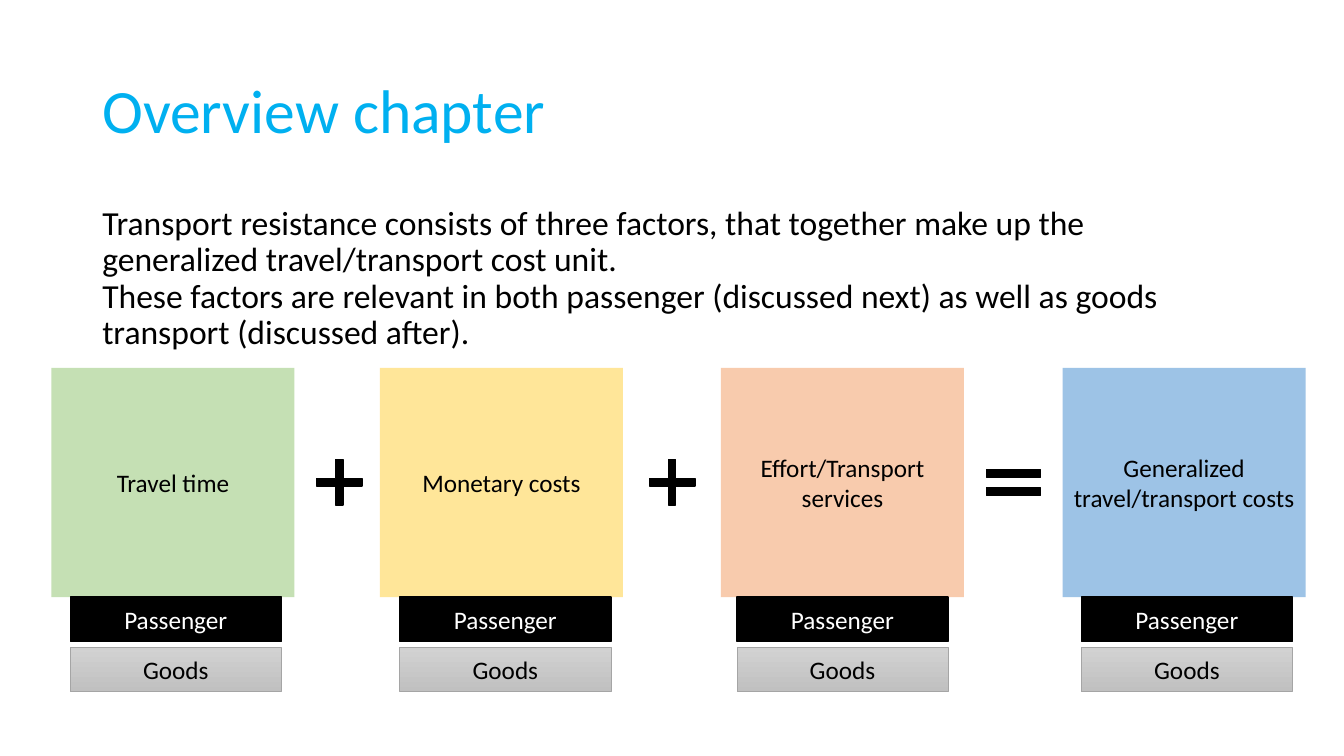
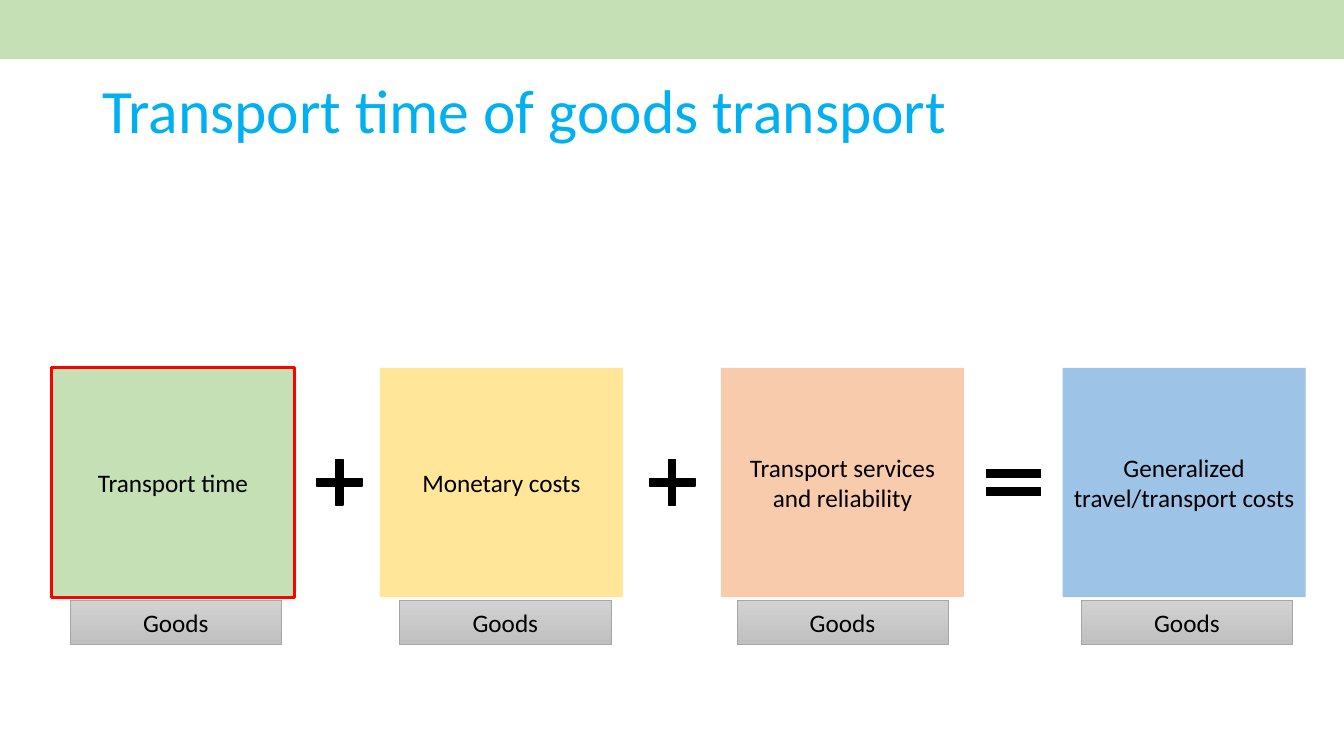
from pptx import Presentation
from pptx.dml.color import RGBColor
from pptx.enum.shapes import MSO_SHAPE as Preset
from pptx.enum.text import MSO_ANCHOR as Anchor, PP_ALIGN as Align
from pptx.util import Pt

# Shared style
FONT = "Calibri"
BLACK = RGBColor(0x00, 0x00, 0x00)
WHITE = RGBColor(0xFF, 0xFF, 0xFF)
TITLE_BLUE = RGBColor(0x00, 0xB0, 0xF0)
GREEN = RGBColor(0xC5, 0xE0, 0xB4)
YELLOW = RGBColor(0xFF, 0xE6, 0x99)
ORANGE = RGBColor(0xF8, 0xCB, 0xAD)
BLUE = RGBColor(0x9D, 0xC3, 0xE6)
RED = RGBColor(0xFF, 0x00, 0x00)
GREY_TOP = RGBColor(0xD2, 0xD2, 0xD2)
GREY_BOTTOM = RGBColor(0xC0, 0xC0, 0xC0)
GREY_LINE = RGBColor(0xA5, 0xA5, 0xA5)

# Shared layout, in points
SLIDE_WIDTH, SLIDE_HEIGHT = 960, 540
MARGIN, TEXT_WIDTH = 66, 828
FACTOR_TOP, FACTOR_WIDTH, FACTOR_HEIGHT = 262.8, 173.6, 163.8
FACTOR_LEFTS = (36.8, 271.4, 515, 759)
FACTOR_COLORS = (GREEN, YELLOW, ORANGE, BLUE)
TAG_LEFTS = (50.2, 285.6, 526.4, 772.4)
TAG_WIDTH, TAG_HEIGHT = 150.8, 31.8
# Preset, left, top, width, height, adjustments
OPERATORS = (
    (Preset.CROSS, 226, 328.2, 32.6, 32.6, (0.42,)),
    (Preset.CROSS, 463.8, 328.2, 32.6, 32.6, (0.42,)),
    (Preset.MATH_EQUAL, 697.6, 325.6, 52.6, 38.2, (0.15, 0.19)),
)


def format_text(paragraph, size, color):
    for run in paragraph.runs:
        run.font.name = FONT
        run.font.size = Pt(size)
        run.font.color.rgb = color


def add_text(slide, text, top, height, size, color, anchor, space_before=0):
    box = slide.shapes.add_textbox(Pt(MARGIN), Pt(top), Pt(TEXT_WIDTH), Pt(height))
    text_frame = box.text_frame
    text_frame.word_wrap = True
    text_frame.vertical_anchor = anchor
    paragraph = text_frame.paragraphs[0]
    paragraph.text = text
    paragraph.line_spacing = 0.9
    paragraph.space_before = Pt(space_before)
    format_text(paragraph, size, color)


def add_title(slide, text):
    add_text(slide, text, 28.8, 104.4, 44, TITLE_BLUE, Anchor.MIDDLE)


def add_preset(slide, preset, left, top, width, height, fill, line=None, line_width=1):
    shape = slide.shapes.add_shape(preset, Pt(left), Pt(top), Pt(width), Pt(height))
    shape.shadow.inherit = False
    shape.fill.solid()
    shape.fill.fore_color.rgb = fill
    if line is None:
        shape.line.fill.background()
    else:
        shape.line.color.rgb = line
        shape.line.width = Pt(line_width)
    return shape


def set_label(shape, text, color=BLACK):
    text_frame = shape.text_frame
    text_frame.text = text
    text_frame.word_wrap = True
    text_frame.vertical_anchor = Anchor.MIDDLE
    paragraph = text_frame.paragraphs[0]
    paragraph.alignment = Align.CENTER
    format_text(paragraph, 18, color)


def add_equation(slide, factors, highlighted=None):
    """Coloured factor boxes joined by plus and equals signs."""
    for left, color, factor in zip(FACTOR_LEFTS, FACTOR_COLORS, factors):
        line = RED if factor == highlighted else None
        box = add_preset(slide, Preset.RECTANGLE, left, FACTOR_TOP,
                         FACTOR_WIDTH, FACTOR_HEIGHT, color, line, 2.25)
        set_label(box, factor)
    for preset, left, top, width, height, adjustments in OPERATORS:
        operator = add_preset(slide, preset, left, top, width, height, BLACK, BLACK)
        for index, value in enumerate(adjustments):
            operator.adjustments[index] = value


def add_passenger_tags(slide, top):
    for left in TAG_LEFTS:
        tag = add_preset(slide, Preset.RECTANGLE, left, top,
                         TAG_WIDTH, TAG_HEIGHT, BLACK, BLACK)
        set_label(tag, "Passenger", WHITE)


def add_goods_tags(slide, top):
    for left in TAG_LEFTS:
        tag = add_preset(slide, Preset.RECTANGLE, left, top,
                         TAG_WIDTH, TAG_HEIGHT, GREY_TOP, GREY_LINE, 0.5)
        tag.fill.gradient()
        tag.fill.gradient_angle = 270
        for stop, color in zip(tag.fill.gradient_stops, (GREY_TOP, GREY_BOTTOM)):
            stop.color.rgb = color
        set_label(tag, "Goods")


def build_overview(slide):
    add_title(slide, "Overview chapter")
    add_text(slide,
             "Transport resistance consists of three factors, that together make up "
             "the generalized travel/transport cost unit. \n"
             "These factors are relevant in both passenger (discussed next) as well "
             "as goods transport (discussed after).",
             144, 342.8, 24, BLACK, Anchor.TOP, space_before=10)
    add_equation(slide, ("Travel time", "Monetary costs", "Effort/Transport services",
                         "Generalized travel/transport costs"))
    add_passenger_tags(slide, 426.4)
    add_goods_tags(slide, 462.4)


def build_goods_time(slide):
    add_title(slide, "Transport time of goods transport")
    add_equation(slide, ("Transport time", "Monetary costs",
                         "Transport services and reliability",
                         "Generalized travel/transport costs"),
                 highlighted="Transport time")
    add_goods_tags(slide, 428.6)
    # Section band in the colour of the highlighted factor
    add_preset(slide, Preset.RECTANGLE, 0, 0, SLIDE_WIDTH, 42.2, GREEN)


def main():
    presentation = Presentation()
    presentation.slide_width = Pt(SLIDE_WIDTH)
    presentation.slide_height = Pt(SLIDE_HEIGHT)
    blank = presentation.slide_layouts[6]
    for build in (build_overview, build_goods_time):
        build(presentation.slides.add_slide(blank))
    presentation.save("out.pptx")


if __name__ == "__main__":
    main()
